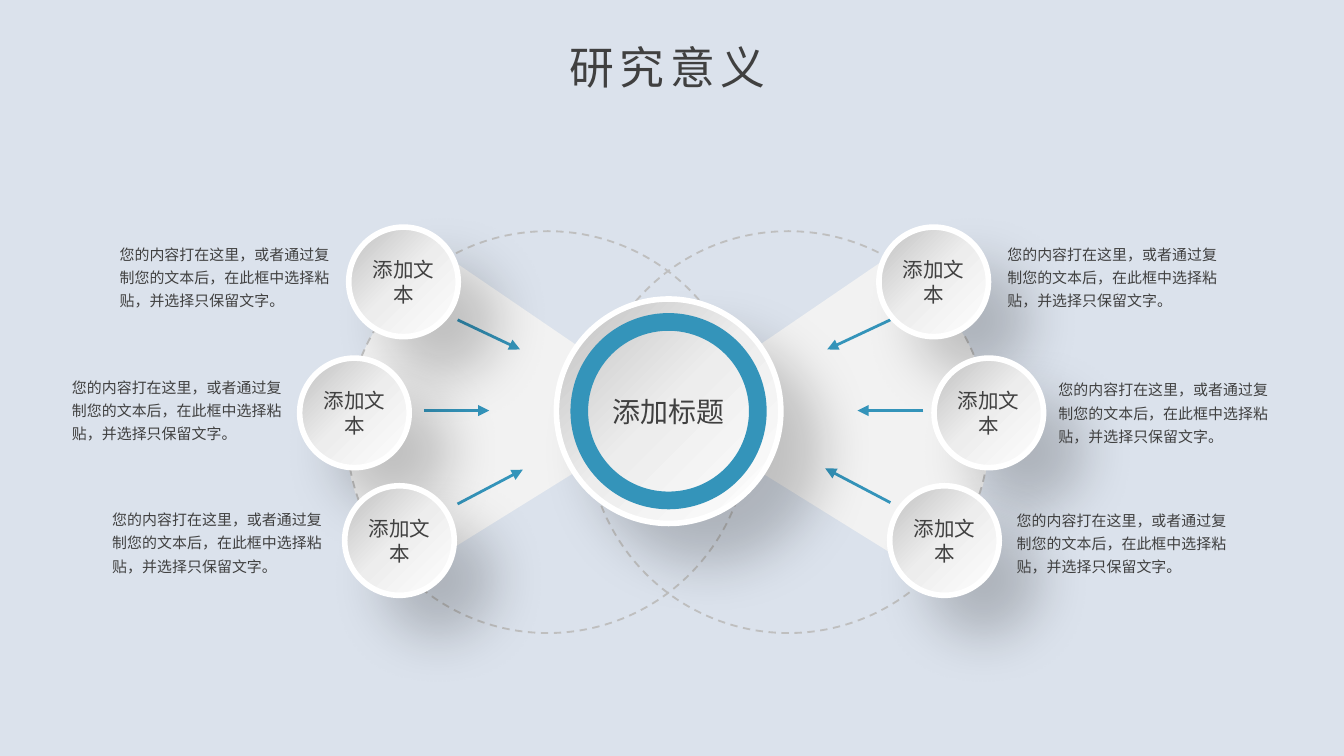
from lxml.etree import SubElement
from pptx import Presentation
from pptx.dml.color import RGBColor
from pptx.enum.dml import MSO_LINE
from pptx.enum.shapes import MSO_CONNECTOR, MSO_SHAPE
from pptx.enum.text import MSO_ANCHOR, MSO_AUTO_SIZE, PP_ALIGN
from pptx.oxml.ns import qn
from pptx.util import Inches, Pt

FONT = "Noto Sans CJK SC"
COLORS = {
    "background": "DBE2EC", "text": "404040", "accent": "3494BA",
    "fan": "F2F2F2", "orbit": "BFBFBF", "rim": "FFFFFF", "shadow": "000000",
}
METAL = [(0, "C0C0C0"), (49, "EDEDED"), (100, "FFFFFF")]
DETAIL = "您的内容打在这里，或者通过复制您的文本后，在此框中选择粘贴，并选择只保留文字。"

# Lengths are in grid units: the slide is 100 columns wide and 56.25 rows high.
COLUMNS, ROWS = 100, 56.25
DISC_SIZE = 8.15
DETAIL_SIZE = (17.6, 6)
ORBIT_SIZE = 29.9
ORBITS = [(25.8, 17.2), (43.7, 17.2)]
DISCS = [(25.95, 16.9), (65.4, 16.9), (22.3, 26.65), (69.5, 26.65), (25.65, 36.15), (66.2, 36.15)]
DETAILS = [(8.2, 17.45), (74.25, 17.45), (4.65, 27.35), (78.05, 27.55), (7.65, 37.2), (74.95, 37.25)]
ARROWS = [
    ((34.05, 23.8), (38.7, 26)), ((31.55, 30.55), (36.4, 30.55)), ((34.05, 37.5), (38.9, 34.95)),
    ((66.25, 37.4), (61.4, 34.85)), ((68.7, 30.55), (63.8, 30.55)), ((66.25, 23.8), (61.55, 26)),
]
FAN_MIRROR = 99.4
FAN_CURVES = [
    [(71.5, 24.6), (69.1, 21.4), (69.7, 21.6), (66, 19.2)],
    [(69.1, 42.9), (73.9, 37), (73.4, 35), (73.6, 31.9)],
    [(73.6, 31.9), (73.5, 29.4), (72.9, 26.8), (71.5, 24.6)],
]
FAN_TIP = (49.3, 30.6)


def grid(*units):
    return [Inches(unit / 10) for unit in units]


def color(name):
    return RGBColor.from_string(COLORS[name])


def write(paragraph, words, size, spacing=None):
    run = paragraph.add_run()
    run.text = words
    run.font.size = Pt(size)
    run.font.name = FONT
    run.font.color.rgb = color("text")
    properties = run.font._element
    SubElement(properties, qn("a:ea"), typeface=FONT)
    if spacing:
        properties.set("spc", str(spacing * 100))


def set_margins(frame, across, down):
    frame.margin_left = frame.margin_right = Inches(across)
    frame.margin_top = frame.margin_bottom = Inches(down)


def add_title(slide, words):
    frame = slide.shapes.add_textbox(*grid(41.4, 2.5, 17.2, 5)).text_frame
    frame.word_wrap = False
    frame.auto_size = MSO_AUTO_SIZE.SHAPE_TO_FIT_TEXT
    write(frame.paragraphs[0], words, 24, spacing=3)


def add_detail(slide, corner):
    frame = slide.shapes.add_textbox(*grid(*corner, *DETAIL_SIZE)).text_frame
    frame.word_wrap = True
    frame.auto_size = MSO_AUTO_SIZE.SHAPE_TO_FIT_TEXT
    set_margins(frame, 0.07, 0.04)
    paragraph = frame.paragraphs[0]
    paragraph.line_spacing = 1.3
    write(paragraph, DETAIL, 8)


def bezier(start, pull, push, end, steps=16):
    """Points along a cubic curve, both ends included."""
    points = []
    for step in range(steps + 1):
        t = step / steps
        weights = ((1 - t) ** 3, 3 * t * (1 - t) ** 2, 3 * t * t * (1 - t), t ** 3)
        points.append(tuple(
            sum(weight * value for weight, value in zip(weights, axis))
            for axis in zip(start, pull, push, end)))
    return points


def add_fan(slide, mirrored):
    shoulder, lower, upper = [bezier(*curve) for curve in FAN_CURVES]
    outline = shoulder + [FAN_TIP] + lower + upper[1:]
    if mirrored:
        outline = [(FAN_MIRROR - x, y) for x, y in outline]
    points = [grid(*point) for point in outline]
    builder = slide.shapes.build_freeform(*points[0])
    builder.add_line_segments(points[1:], close=True)
    fan = builder.convert_to_shape()
    fan.shadow.inherit = False
    fan.fill.solid()
    fan.fill.fore_color.rgb = color("fan")
    fan.line.fill.background()


def add_orbit(slide, corner):
    orbit = slide.shapes.add_shape(MSO_SHAPE.OVAL, *grid(*corner, ORBIT_SIZE, ORBIT_SIZE))
    orbit.shadow.inherit = False
    orbit.fill.background()
    orbit.line.color.rgb = color("orbit")
    orbit.line.width = Pt(1)
    orbit.line.dash_style = MSO_LINE.DASH


def add_arrow(slide, start, end):
    arrow = slide.shapes.add_connector(MSO_CONNECTOR.STRAIGHT, *grid(*start, *end))
    arrow.line.color.rgb = color("accent")
    arrow.line.width = Pt(1.5)
    SubElement(arrow.line._get_or_add_ln(), qn("a:tailEnd"), type="triangle")
    SubElement(arrow._element.spPr, qn("a:effectLst"))


def fill_metal(shape):
    """Three-stop diagonal gradient."""
    shape.fill.gradient()
    gradient = shape._element.spPr.find(qn("a:gradFill"))
    for child in list(gradient):
        gradient.remove(child)
    stops = SubElement(gradient, qn("a:gsLst"))
    for position, shade in METAL:
        stop = SubElement(stops, qn("a:gs"), pos=str(position * 1000))
        SubElement(stop, qn("a:srgbClr"), val=shade)
    SubElement(gradient, qn("a:lin"), ang=str(45 * 60000), scaled="0")


def cast_shadow(shape):
    shape.shadow.inherit = False
    effects = shape._element.spPr.find(qn("a:effectLst"))
    shadow = SubElement(effects, qn("a:outerShdw"), blurRad=str(Pt(29)), dist=str(Pt(29)),
                        dir=str(45 * 60000), algn="tl", rotWithShape="0")
    tint = SubElement(shadow, qn("a:srgbClr"), val=COLORS["shadow"])
    SubElement(tint, qn("a:alpha"), val="20000")


def add_disc(shapes, corner, size, words, text_size):
    disc = shapes.add_shape(MSO_SHAPE.OVAL, *grid(*corner, size, size))
    fill_metal(disc)
    disc.line.color.rgb = color("rim")
    disc.line.width = Pt(3)
    cast_shadow(disc)
    frame = disc.text_frame
    frame.word_wrap = True
    frame.vertical_anchor = MSO_ANCHOR.MIDDLE
    set_margins(frame, 0, 0.04)
    paragraph = frame.paragraphs[0]
    paragraph.alignment = PP_ALIGN.CENTER
    write(paragraph, words, text_size)


def add_hub(slide):
    hub = slide.shapes.add_group_shape()
    add_disc(hub.shapes, (41.4, 22.25), 16.7, "添加标题", 15)
    ring = hub.shapes.add_shape(MSO_SHAPE.DONUT, *grid(42.45, 23.3, 14.6, 14.6))
    ring.adjustments[0] = 0.09
    ring.shadow.inherit = False
    ring.fill.solid()
    ring.fill.fore_color.rgb = color("accent")
    ring.line.fill.background()


def main():
    deck = Presentation()
    deck.slide_width, deck.slide_height = grid(COLUMNS, ROWS)
    slide = deck.slides.add_slide(deck.slide_layouts[6])
    slide.background.fill.solid()
    slide.background.fill.fore_color.rgb = color("background")

    add_title(slide, "研究意义")
    for mirrored in (False, True):
        add_fan(slide, mirrored)
    for corner in ORBITS:
        add_orbit(slide, corner)
    for start, end in ARROWS:
        add_arrow(slide, start, end)
    for corner in DISCS:
        add_disc(slide.shapes, corner, DISC_SIZE, "添加文本", 11)
    for corner in DETAILS:
        add_detail(slide, corner)
    add_hub(slide)
    deck.save("out.pptx")


if __name__ == "__main__":
    main()
